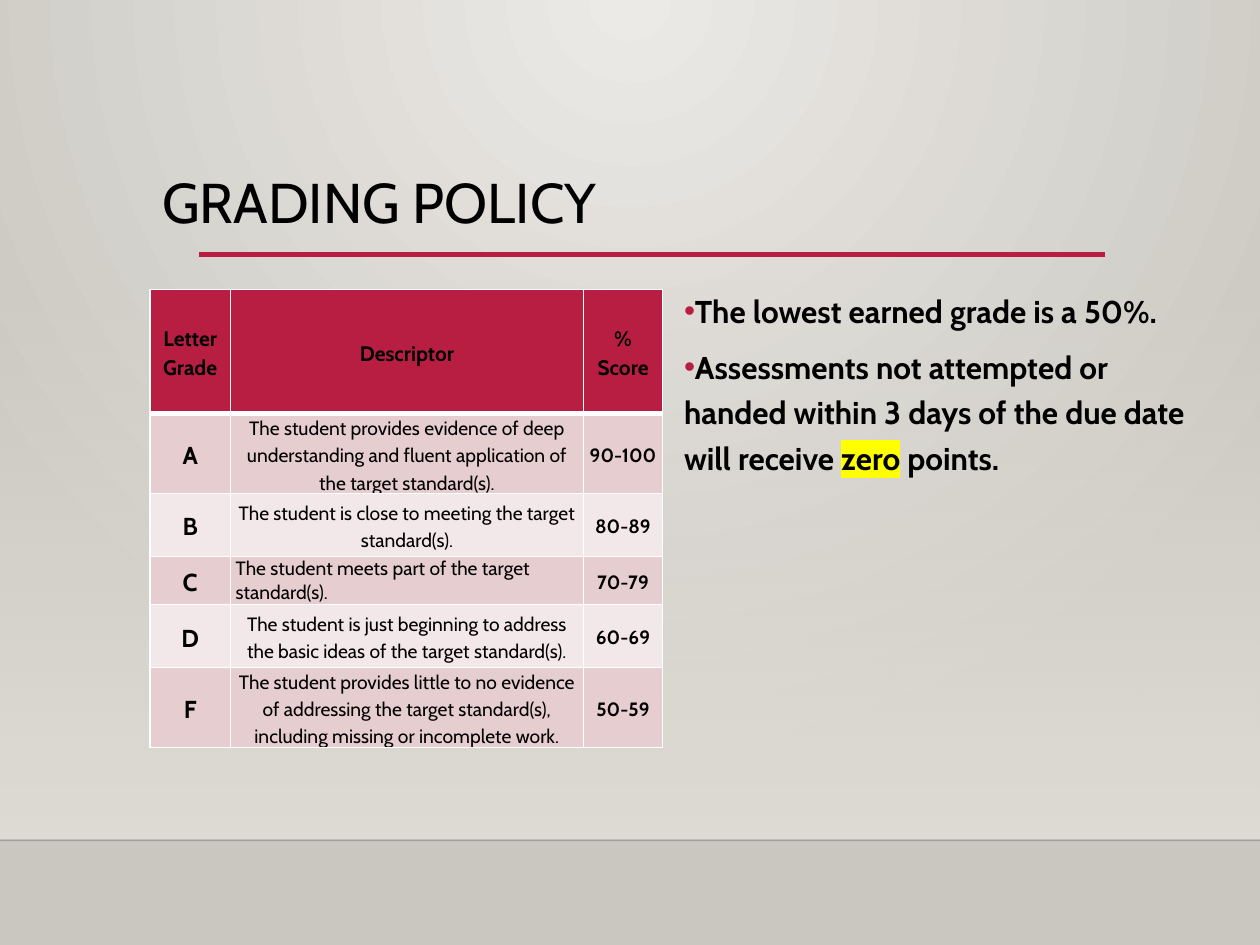
from lxml import etree
from pptx import Presentation
from pptx import util as u
from pptx.dml.color import RGBColor
from pptx.enum import shapes, text
from pptx.oxml.ns import qn

Cm, Pt = u.Cm, u.Pt
FONT = "Cabin"
HUE = {
    "ink": "000000", "red": "B71E42", "white": "FFFFFF", "mark": "FFFF00",
    "pink": "E6CDCF", "pale": "F3E8E9",
    "light": "ECEAE7", "dark": "CAC7C1", "wall": "DFDBD5", "edge": "000001",
}
HEAD = ["Letter Grade", "Descriptor", "% Score"]
GRADES = [
    ("A", "The student provides evidence of deep understanding and fluent "
          "application of the target standard(s).", "90-100"),
    ("B", "The student is close to meeting the target standard(s).", "80-89"),
    ("C", "The student meets part of the target standard(s).", "70-79"),
    ("D", "The student is just beginning to address the basic ideas of the "
          "target standard(s).", "60-69"),
    ("F", "The student provides little to no evidence of addressing the target "
          "standard(s), including missing or incomplete work.", "50-59"),
]
TIGHT = "ACF"  # grades whose descriptor has no inset above and below
COLS = [1.63, 7.11, 1.6]
ROWS = [2.5, 1.57, 1.24, 0.97, 1.24, 1.57]
NOTES = [
    [("The lowest earned grade is a 50%.", None)],
    [("Assessments not attempted or handed within 3 days of the due date "
      "will receive ", None), ("zero", "mark"), (" points.", None)],
]


def rgb(name):
    return RGBColor.from_string(HUE[name])


def sub(node, tag, **attrs):
    return etree.SubElement(node, qn(tag), attrs)


def tint(node, name, alpha=None):
    clr = sub(node, "a:srgbClr", val=HUE[name])
    if alpha is not None:
        sub(clr, "a:alpha", val=str(alpha * 1000))


def grade(root, stops):
    """Refill the gradient under root with (position, colour, alpha) stops."""
    grad = root.find(".//" + qn("a:gradFill"))
    for kid in list(grad):
        grad.remove(kid)
    gs = sub(grad, "a:gsLst")
    for pos, name, alpha in stops:
        tint(sub(gs, "a:gs", pos=str(pos * 1000)), name, alpha)
    return grad


def add_run(para, words, size, bold=False, mark=None):
    run = para.add_run()
    run.text = words
    font = run.font
    font.size, font.bold, font.name = Pt(size), bold, FONT
    font.color.rgb = rgb("ink")
    if mark:
        glow = etree.Element(qn("a:highlight"))
        tint(glow, mark)
        run.font.fill._xPr.find(qn("a:solidFill")).addnext(glow)


def add_box(slide, x, y, w, h):
    frame = slide.shapes.add_textbox(Cm(x), Cm(y), Cm(w), Cm(h)).text_frame
    frame.word_wrap = True
    return frame


def add_rule(slide, x1, x2, y, name, width, alpha=None):
    line = slide.shapes.add_connector(
        shapes.MSO_CONNECTOR.STRAIGHT, Cm(x1), Cm(y), Cm(x2), Cm(y))
    line.line.color.rgb = rgb(name)
    line.line.width = Pt(width)
    props = line._element.spPr
    if alpha is not None:
        sub(props.find(".//" + qn("a:srgbClr")), "a:alpha", val=str(alpha * 1000))
    sub(props, "a:effectLst")


def add_wall(slide):
    slide.background.fill.gradient()
    grad = grade(slide.element, [(0, "light", None), (100, "dark", None)])
    way = sub(grad, "a:path", path="circle")
    sub(way, "a:fillToRect", l="43000", t="0", r="43000", b="100000")

    wall = slide.shapes.add_shape(
        shapes.MSO_SHAPE.RECTANGLE, 0, Cm(5.59), Cm(25.4), Cm(11.33))
    wall.shadow.inherit = False
    wall.line.fill.background()
    wall.fill.gradient()
    grad = grade(wall._element, [(0, "wall", 0), (100, "wall", None)])
    sub(grad, "a:lin", ang="5400000", scaled="0")


def add_title(slide, words):
    frame = add_box(slide, 3.02, 2.24, 20.02, 2.92)
    frame.vertical_anchor = text.MSO_ANCHOR.BOTTOM
    frame.margin_bottom = Cm(0.4)
    para = frame.paragraphs[0]
    para.line_spacing = 0.9
    add_run(para, words, 32)


def add_notes(slide):
    frame = add_box(slide, 13.54, 5.61, 11.25, 9.58)
    for i, runs in enumerate(NOTES):
        para = frame.add_paragraph() if i else frame.paragraphs[0]
        para.line_spacing, para.space_after = 1.2, Pt(6)
        props = para._p.get_or_add_pPr()
        props.set("marL", "0")
        props.set("indent", str(-Cm(0.64)))
        tint(sub(props, "a:buClr"), "red")
        sub(props, "a:buFont", typeface="Arial")
        sub(props, "a:buChar", char="•")
        for words, mark in runs:
            add_run(para, words, 18, True, mark)


def add_edges(cell, top, bottom):
    props = cell._tc.get_or_add_tcPr()
    widths = {"a:lnL": 1, "a:lnR": 1, "a:lnT": top, "a:lnB": bottom}
    for i, (tag, width) in enumerate(widths.items()):
        edge = etree.Element(qn(tag), w=str(Pt(width)))
        tint(sub(edge, "a:solidFill"), "white")
        props.insert(i, edge)


def fill_cell(cell, words, size, bold, fill, inset=0.1, plain=False):
    cell.fill.solid()
    cell.fill.fore_color.rgb = rgb(fill)
    cell.vertical_anchor = text.MSO_ANCHOR.MIDDLE
    cell.margin_left = cell.margin_right = Cm(0.1)
    cell.margin_top = cell.margin_bottom = Cm(inset)
    para = cell.text_frame.paragraphs[0]
    if not plain:
        para.alignment = text.PP_ALIGN.CENTER
        para.line_spacing = 1.15
    add_run(para, words, size, bold)


def add_grades(slide):
    table = slide.shapes.add_table(
        len(ROWS), len(COLS), Cm(3.02), Cm(5.84),
        Cm(sum(COLS)), Cm(sum(ROWS))).table
    for col, width in zip(table.columns, COLS):
        col.width = Cm(width)
    for row, height in zip(table.rows, ROWS):
        row.height = Cm(height)

    # Header row
    for c, words in enumerate(HEAD):
        fill_cell(table.cell(0, c), words, 12, True, "red")
        add_edges(table.cell(0, c), 1, 3)

    # One row per letter grade
    for r, (letter, about, score) in enumerate(GRADES, 1):
        fill = "pink" if r % 2 else "pale"
        fill_cell(table.cell(r, 0), letter, 14, True, fill)
        fill_cell(table.cell(r, 1), about, 11, False, fill,
                  0 if letter in TIGHT else 0.1, letter == "C")
        fill_cell(table.cell(r, 2), score, 11, True, fill)
        for c in range(len(COLS)):
            add_edges(table.cell(r, c), 3 if r == 1 else 1, 1)


def main():
    deck = Presentation()
    deck.slide_width, deck.slide_height = Cm(25.4), Cm(19.05)
    slide = deck.slides.add_slide(deck.slide_layouts[6])

    # Backdrop and rules
    add_wall(slide)
    add_rule(slide, 0, 25.4, 16.94, "edge", 1, 20)
    add_rule(slide, 4.01, 22.28, 5.13, "red", 2.5)

    # Content
    add_title(slide, "GRADING POLICY")
    add_notes(slide)
    add_grades(slide)
    deck.save("out.pptx")


if __name__ == "__main__":
    main()
